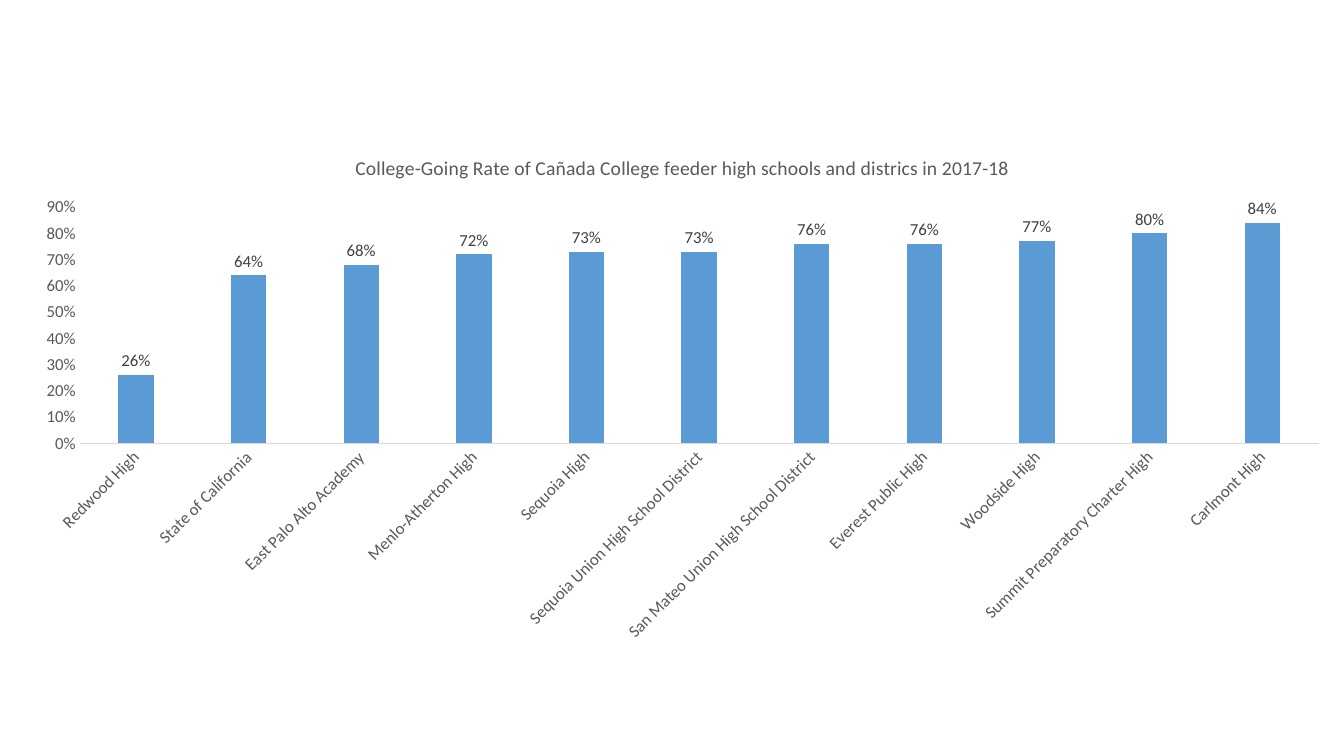
from pptx import Presentation, util as u
from pptx.chart import data as cd
from pptx.dml import color as dc
from pptx.enum import chart as ec

TITLE = "College-Going Rate of Cañada College feeder high schools and districs in 2017-18"
RATES = [
    ("Redwood High", 0.26),
    ("State of California", 0.64),
    ("East Palo Alto Academy", 0.68),
    ("Menlo-Atherton High", 0.72),
    ("Sequoia High", 0.73),
    ("Sequoia Union High School District", 0.73),
    ("San Mateo Union High School District", 0.76),
    ("Everest Public High", 0.76),
    ("Woodside High", 0.77),
    ("Summit Preparatory Charter High", 0.8),
    ("Carlmont High", 0.84),
]
BOX = (0.2, 1.34, 13.14, 5.13)
GREY, DARK, RULE, BLUE = "595959", "404040", "D9D9D9", "5B9BD5"


def paint(target, shade):
    target.rgb = dc.RGBColor.from_string(shade)


def style(font, size=12, shade=GREY):
    font.name = "Calibri"
    font.size = u.Pt(size)
    font.bold = False
    paint(font.color, shade)


def write(frame, words, **form):
    run = frame.paragraphs[0].add_run()
    run.text = words
    style(run.font, **form)


deck = Presentation()
deck.slide_width, deck.slide_height = u.Inches(13.33), u.Inches(7.5)
slide = deck.slides.add_slide(deck.slide_layouts[6])

data = cd.CategoryChartData(number_format="0%")
data.categories = [school for school, rate in RATES]
data.add_series("College-Going Rate", [rate for school, rate in RATES])
chart = slide.shapes.add_chart(
    ec.XL_CHART_TYPE.COLUMN_CLUSTERED, *map(u.Inches, BOX), data).chart
style(chart.font)
chart.has_legend = False
chart.has_title = True
write(chart.chart_title.text_frame, TITLE, size=14)
chart.chart_title.include_in_layout = False

schools, scale = chart.category_axis, chart.value_axis
for axis in (schools, scale):
    axis.has_major_gridlines = False
    axis.major_tick_mark = axis.minor_tick_mark = ec.XL_TICK_MARK.NONE
    style(axis.tick_labels.font)
schools.format.line.width = u.Pt(0.75)
schools.format.line.fill.solid()
paint(schools.format.line.color, RULE)
schools._element.txPr.bodyPr.set("rot", str(-45 * 60000))
scale.minimum_scale, scale.maximum_scale, scale.major_unit = 0, 0.9, 0.1
scale.format.line.fill.background()
scale.tick_labels.number_format = "0%"
scale.tick_labels.number_format_is_linked = False

plot = chart.plots[0]
plot.gap_width, plot.overlap = 219, -27
plot.vary_by_categories = False
bars = plot.series[0]
bars.format.fill.solid()
paint(bars.format.fill.fore_color, BLUE)
plot.has_data_labels = True
marks = plot.data_labels
marks.show_value = True
marks.number_format = "0%"
marks.number_format_is_linked = False
marks.position = ec.XL_LABEL_POSITION.OUTSIDE_END
style(marks.font, shade=DARK)

deck.save("out.pptx")
